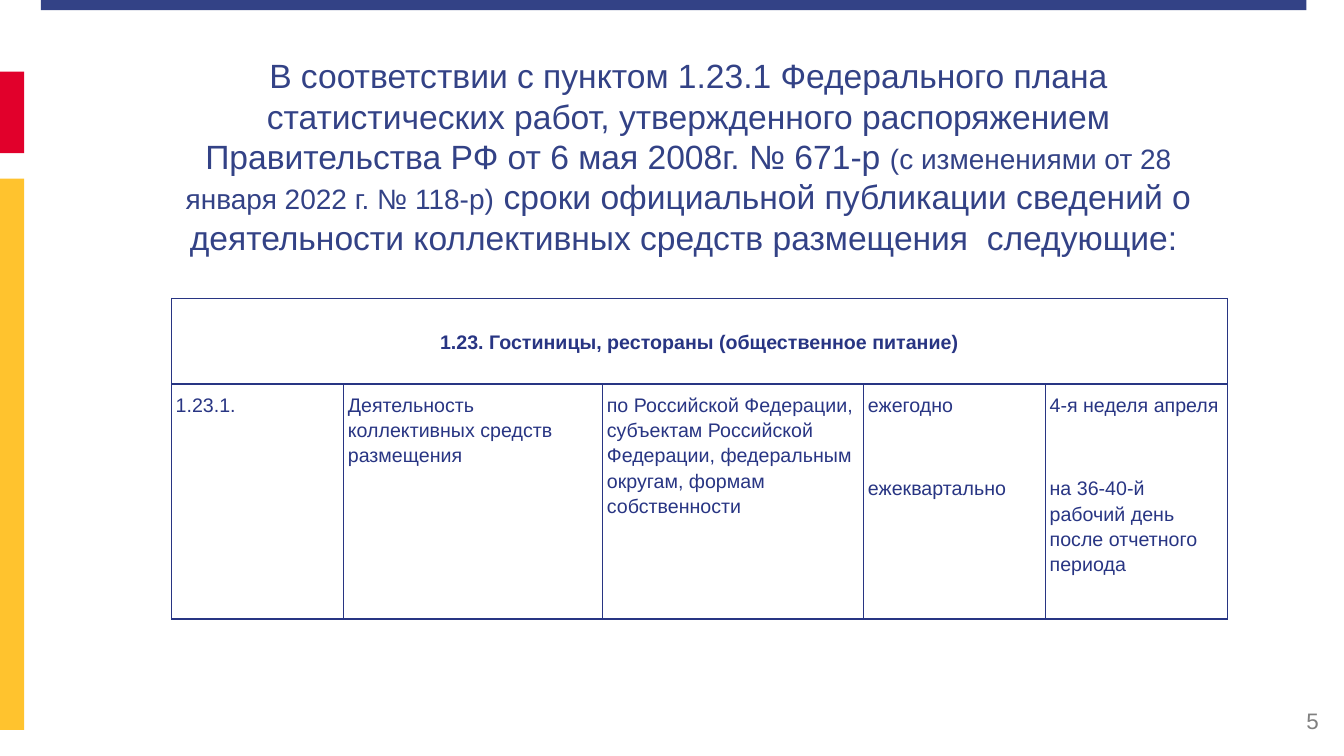
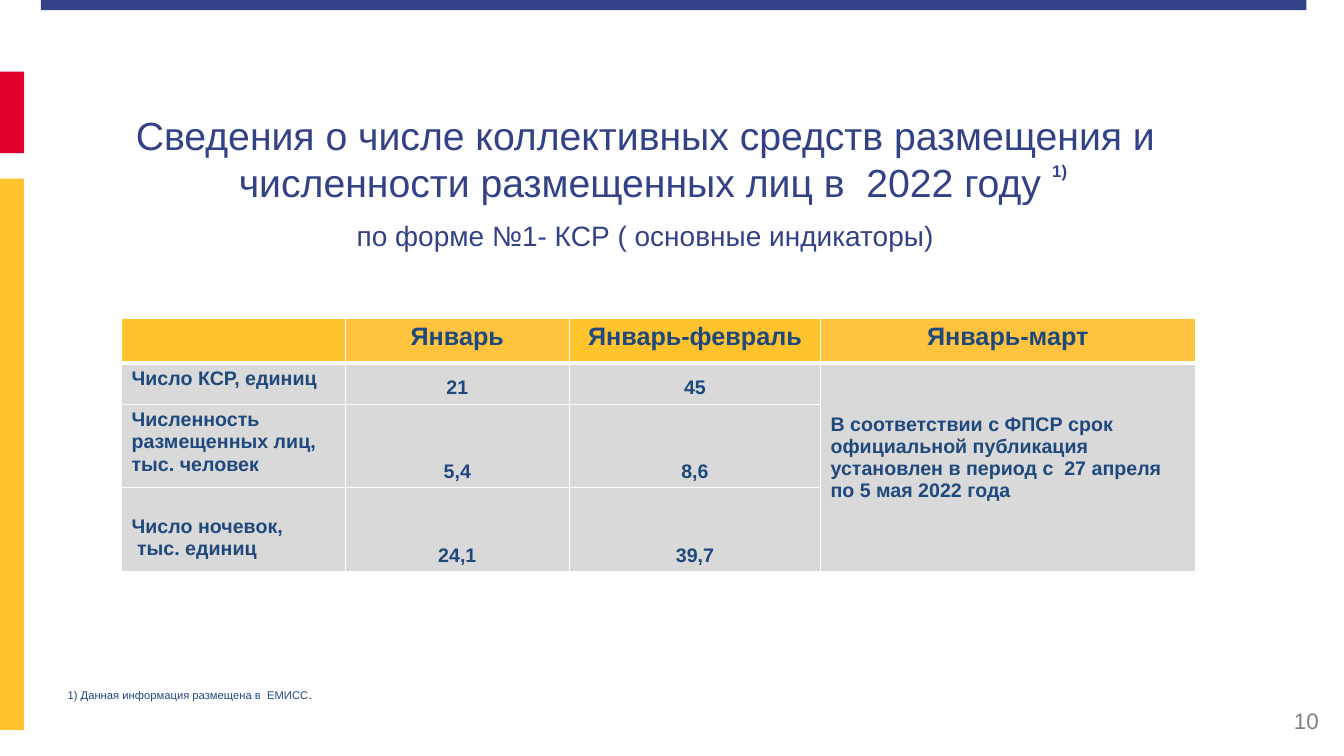
"""Builds two slides on publication dates and figures for collective lodging."""
from dataclasses import dataclass

import pptx
import pptx.dml.color
import pptx.enum.shapes
import pptx.enum.text
import pptx.oxml.ns
import pptx.util
from lxml import etree

Pt = pptx.util.Pt
ALIGN = pptx.enum.text.PP_ALIGN
ANCHOR = pptx.enum.text.MSO_ANCHOR
AUTO_SIZE = pptx.enum.text.MSO_AUTO_SIZE

FONT = "Arial"
COLORS = {
    "brand": "334286",
    "red": "E1002B",
    "yellow": "FFC32E",
    "header": "FFC32D",
    "header_alt": "FFC33E",
    "grid": "283583",
    "figures": "1F497D",
    "cell": "D9D9D9",
    "page_number": "808080",
    "white": "FFFFFF",
    "black": "000000",
}


@dataclass(frozen=True)
class Area:
    left: float
    top: float
    width: float
    height: float


@dataclass(frozen=True)
class Span:
    text: str
    size: float | None = None
    color: str | None = None


@dataclass(frozen=True)
class Style:
    size: float
    color: str
    bold: bool = False
    align: ALIGN = ALIGN.LEFT
    before: float = 0
    line: float | None = None


@dataclass(frozen=True)
class Cell:
    text: str
    style: Style
    fill: str | None = None
    anchor: ANCHOR = ANCHOR.TOP
    margins: tuple[float, float, float, float] = (7.2, 3.6, 7.2, 3.6)


BANDS = (
    (Area(29.3, 0, 903.8, 7.2), "brand"),
    (Area(0, 51.1, 17.3, 58.3), "red"),
    (Area(0, 127.6, 17.3, 393.8), "yellow"),
)
TITLE = Style(24, "brand", align=ALIGN.CENTER, before=10)


def rgb(name: str) -> pptx.dml.color.RGBColor:
    return pptx.dml.color.RGBColor.from_string(COLORS[name])


def write(frame, paragraphs: list[list[Span]], style: Style) -> None:
    for index, spans in enumerate(paragraphs):
        para = frame.paragraphs[0] if index == 0 else frame.add_paragraph()
        para.alignment = style.align
        para.space_before = Pt(style.before)
        if style.line:
            para.line_spacing = style.line
        para.font.name = FONT
        para.font.bold = style.bold
        para.font.size = Pt(style.size)
        para.font.color.rgb = rgb(style.color)
        for span in spans:
            run = para.add_run()
            run.text = span.text
            run.font.name = FONT
            run.font.bold = style.bold
            run.font.size = Pt(span.size or style.size)
            run.font.color.rgb = rgb(span.color or style.color)


def add_text(page, area: Area, paragraphs: list[list[Span]], style: Style,
             wrap: bool = True):
    box = page.shapes.add_textbox(
        Pt(area.left), Pt(area.top), Pt(area.width), Pt(area.height))
    box.text_frame.word_wrap = wrap
    if not wrap:
        box.text_frame.auto_size = AUTO_SIZE.SHAPE_TO_FIT_TEXT
    write(box.text_frame, paragraphs, style)
    return box


def add_page(deck, number: int):
    page = deck.slides.add_slide(deck.slide_layouts[6])
    for area, color in BANDS:
        band = page.shapes.add_shape(
            pptx.enum.shapes.MSO_SHAPE.RECTANGLE,
            Pt(area.left), Pt(area.top), Pt(area.width), Pt(area.height))
        band.shadow.inherit = False
        band.fill.solid()
        band.fill.fore_color.rgb = rgb(color)
        band.line.fill.background()
    footer = add_text(page, Area(733, 500.4, 216, 28.8), [[Span(str(number))]],
                      Style(16, "page_number", align=ALIGN.RIGHT))
    footer.text_frame.vertical_anchor = ANCHOR.MIDDLE
    return page


def set_borders(cell, color: str, widths: dict[str, float]) -> None:
    properties = cell._tc.get_or_add_tcPr()
    qn = pptx.oxml.ns.qn
    for edge in "LRTB":
        width = widths.get(edge, 1)
        line = etree.SubElement(properties, qn(f"a:ln{edge}"), w=str(Pt(width)))
        if width:
            fill = etree.SubElement(line, qn("a:solidFill"))
            etree.SubElement(fill, qn("a:srgbClr"), val=COLORS[color])
        else:
            etree.SubElement(line, qn("a:noFill"))


def add_table(page, left: float, top: float, columns: list[float],
              rows: list[float], border: str,
              edges: dict[tuple[int, int], dict[str, float]],
              cells: dict[tuple[int, int], Cell],
              merges: list[tuple[int, int, int, int]]) -> None:
    table = page.shapes.add_table(
        len(rows), len(columns), Pt(left), Pt(top),
        Pt(sum(columns)), Pt(sum(rows))).table
    table.first_row = table.horz_banding = False
    for column, width in zip(table.columns, columns):
        column.width = Pt(width)
    for row, height in zip(table.rows, rows):
        row.height = Pt(height)
    for r in range(len(rows)):
        for c in range(len(columns)):
            cell = table.cell(r, c)
            set_borders(cell, border, edges.get((r, c), {}))
            content = cells.get((r, c))
            if content is None or content.fill is None:
                cell.fill.background()
            else:
                cell.fill.solid()
                cell.fill.fore_color.rgb = rgb(content.fill)
            if content is None:
                continue
            cell.vertical_anchor = content.anchor
            (cell.margin_left, cell.margin_top, cell.margin_right,
             cell.margin_bottom) = map(Pt, content.margins)
            lines = [[Span(line)] for line in content.text.split("\n")]
            write(cell.text_frame, lines, content.style)
    for first_row, first_column, last_row, last_column in merges:
        table.cell(first_row, first_column).merge(
            table.cell(last_row, last_column))


def add_schedule_page(deck) -> None:
    page = add_page(deck, 5)
    add_text(page, Area(111.6, 36, 760.3, 141.8), [[
        Span("В соответствии с пунктом 1.23.1 Федерального плана статистических "
             "работ, утвержденного распоряжением Правительства РФ от 6 мая "
             "2008г. № 671-р "),
        Span("(с изменениями от 28 января 2022 г. № 118-р)", 20),
        Span(" сроки официальной публикации сведений о деятельности "
             "коллективных средств размещения  следующие: "),
    ]], TITLE)
    margins = (2.9, 5, 2.9, 5)
    heading = Style(14, "grid", bold=True, align=ALIGN.CENTER, line=1.15)
    body = Style(14, "grid", line=1.15)
    texts = {
        (1, 0): "1.23.1.",
        (1, 1): "Деятельность коллективных средств размещения",
        (1, 2): "по Российской Федерации, субъектам Российской Федерации, "
                "федеральным округам, формам собственности",
        (1, 3): "ежегодно",
        (1, 4): "4-я неделя апреля",
        (2, 3): "ежеквартально",
        (2, 4): "на 36-40-й рабочий день после отчетного периода",
    }
    cells = {place: Cell(text, body, margins=margins)
             for place, text in texts.items()}
    cells[0, 0] = Cell("1.23. Гостиницы, рестораны (общественное питание)",
                       heading, anchor=ANCHOR.MIDDLE, margins=margins)
    edges = {(r, c): {edge: 0} for r, edge in ((1, "B"), (2, "T"))
             for c in (3, 4)}
    add_table(page, 122.6, 213.1, [123, 185, 186.5, 129.8, 129.8],
              [61.2, 59.8, 108], "grid", edges, cells,
              [(0, 0, 0, 4)] + [(1, c, 2, c) for c in range(3)])


def add_figures_page(deck) -> None:
    page = add_page(deck, 10)
    add_text(page, Area(59.2, 75.6, 803.5, 118), [
        [Span("Сведения о числе коллективных средств размещения и численности "
              "размещенных лиц в  2022 году ", 28)],
        [Span("по форме №1- КСР ( основные индикаторы)", 20)],
    ], TITLE)
    heading = Style(18, "figures", bold=True, align=ALIGN.CENTER)
    label = Style(14, "figures", bold=True)
    value = Style(14, "figures", bold=True, align=ALIGN.CENTER)
    headings = ("", "Январь", "Январь-февраль", "Январь-март")
    cells = {(0, c): Cell(text, heading, ("header", "header_alt")[c % 2])
             for c, text in enumerate(headings)}
    records = (
        ("Число КСР, единиц", 3.6, "21", "45"),
        ("Численность размещенных лиц,\nтыс. человек", 3.6, "5,4", "8,6"),
        ("Число ночевок,\n тыс. единиц", 19.7, "24,1", "39,7"),
    )
    for r, (name, top, *values) in enumerate(records, 1):
        cells[r, 0] = Cell(name, label, "cell", margins=(7.2, top, 7.2, 3.6))
        for c, text in enumerate(values, 1):
            cells[r, c] = Cell(text, value, "cell", ANCHOR.BOTTOM)
    cells[1, 3] = Cell(
        "В соответствии с ФПСР срок официальной публикация установлен в период "
        "с  27 апреля по 5 мая 2022 года",
        label, "cell", margins=(7.2, 35.8, 7.2, 3.6))
    edges = {(r, c): {edge: 3} for r, edge in ((0, "B"), (1, "T"))
             for c in range(4)}
    add_table(page, 86.8, 227.2, [159.8, 160.2, 179.3, 267.6],
              [32.2, 29.3, 59.8, 59.8], "white", edges, cells, [(1, 3, 3, 3)])
    add_text(page, Area(41.2, 488.2, 190.8, 17.3),
             [[Span("1) Данная информация размещена в  ЕМИСС"),
               Span(".", color="black")]], Style(8, "figures"), wrap=False)
    add_text(page, Area(744.5, 111.2, 25.2, 21.6), [[Span("1)")]],
             Style(12, "brand", bold=True), wrap=False)


def main() -> None:
    deck = pptx.Presentation()
    deck.slide_width, deck.slide_height = Pt(960), Pt(540)
    add_schedule_page(deck)
    add_figures_page(deck)
    deck.save("out.pptx")


if __name__ == "__main__":
    main()
